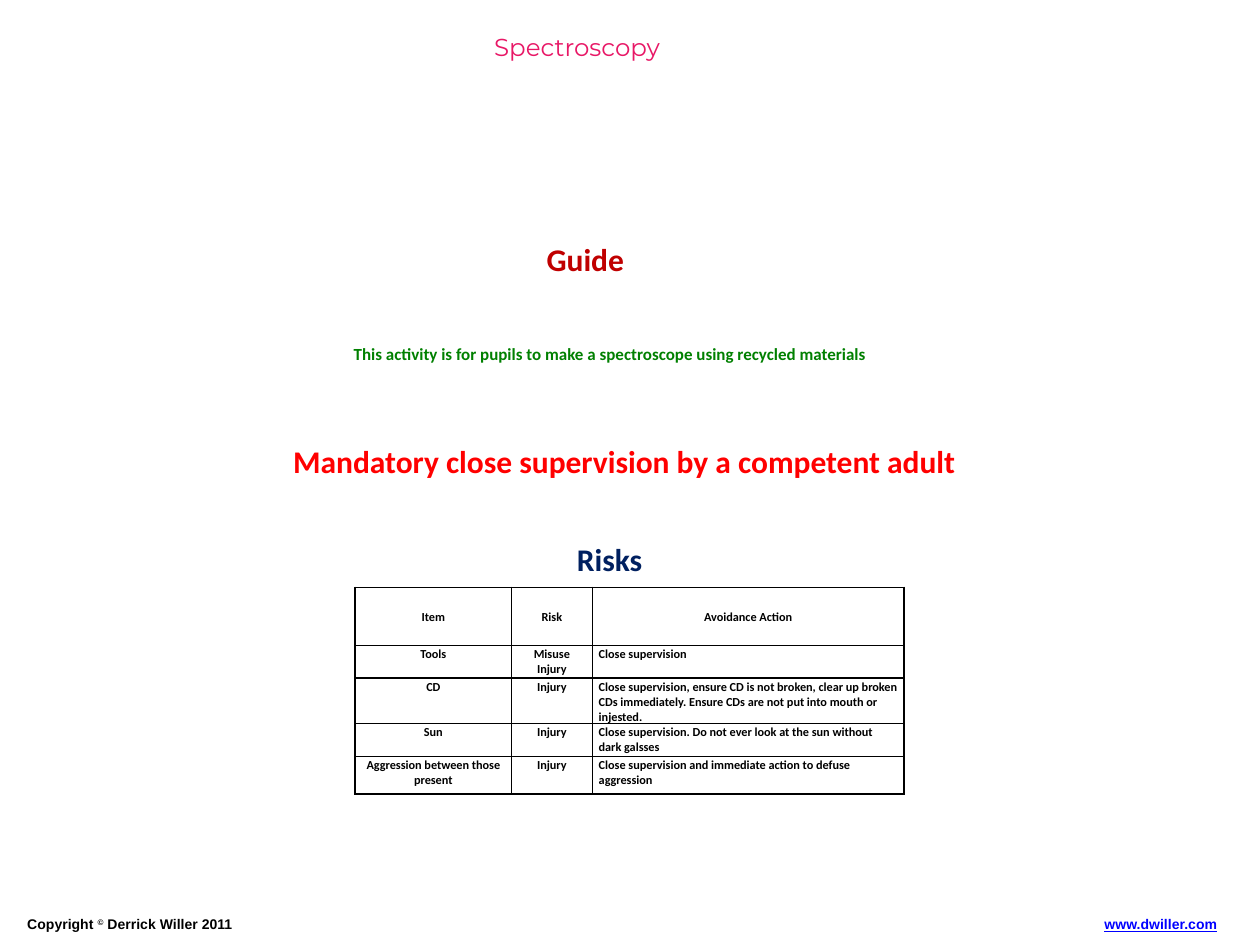
from lxml import etree
from pptx import Presentation
from pptx.dml.color import RGBColor
from pptx.enum import text
from pptx.oxml import ns
from pptx.util import Cm, Pt

COLOURS = {
    "black": "000000", "pink": "E81766", "dark red": "C00000", "green": "008000",
    "navy": "002060", "red": "FF0000", "link": "0000FF",
}


def format_paragraph(paragraph, face, size, colour, bold=True):
    font = paragraph.font
    font.name, font.size, font.bold = face, Pt(size), bold
    font.color.rgb = RGBColor.from_string(COLOURS[colour])


def add_line(box, pieces, face, size, colour, wrap=True):
    """Add a text box holding one paragraph; return that paragraph."""
    frame = slide.shapes.add_textbox(*map(Cm, box)).text_frame
    frame.word_wrap = wrap
    paragraph = frame.paragraphs[0]
    for piece in pieces:
        paragraph.add_run().text = piece
    format_paragraph(paragraph, face, size, colour)
    return paragraph


prs = Presentation()
prs.slide_width, prs.slide_height = Cm(25.4), Cm(19.05)
slide = prs.slides.add_slide(prs.slide_layouts[5])

# Title
title = slide.shapes.title
title.left, title.top, title.width, title.height = Cm(9.12), Cm(0.51), Cm(5.03), Cm(1.47)
title.text_frame.text = "Spectroscopy"
title.text_frame.word_wrap = False
title.text_frame.auto_size = text.MSO_AUTO_SIZE.NONE
title.text_frame.vertical_anchor = text.MSO_ANCHOR.TOP
title.text_frame.paragraphs[0].alignment = text.PP_ALIGN.CENTER
format_paragraph(title.text_frame.paragraphs[0], "Montserrat", 14, "pink", bold=False)

# Headings and introduction
for box, wording, size, colour, wrap in [
    ((10.77, 4.72, 2.08, 1.02), "Guide", 18, "dark red", False),
    ((6.88, 6.81, 15.67, 1.5),
     "This activity is for pupils to make a spectroscope using recycled materials",
     9.7, "green", True),
    ((5.66, 8.79, 15.93, 1.02),
     "Mandatory close supervision by a competent adult", 18, "red", False),
    ((11.38, 10.77, 1.83, 1.02), "Risks", 18, "navy", False),
]:
    add_line(box, [wording], "Calibri", size, colour, wrap)

# Risk table
risks = [
    ("Item", "Risk", "Avoidance Action"),
    ("Tools", "Misuse\nInjury", "Close supervision"),
    ("CD", "Injury", "Close supervision, ensure CD is not broken, clear up broken CDs "
     "immediately. Ensure CDs are not put into mouth or injested."),
    ("Sun", "Injury", "Close supervision. Do not ever look at the sun without dark galsses"),
    ("Aggression between those present", "Injury",
     "Close supervision and immediate action to defuse aggression"),
]
column_widths = [3.15, 1.63, 6.28]
row_heights = [1.17, 0.66, 0.66, 0.66, 0.76]
table = slide.shapes.add_table(
    len(risks), len(column_widths), Cm(7.16), Cm(11.84),
    Cm(sum(column_widths)), Cm(sum(row_heights))).table
table.first_row = table.horz_banding = False
for column, width in zip(table.columns, column_widths):
    column.width = Cm(width)
for row, height in zip(table.rows, row_heights):
    row.height = Cm(height)

for r, risk in enumerate(risks):
    for c, wording in enumerate(risk):
        cell = table.cell(r, c)
        cell.text = wording
        cell.margin_left = cell.margin_right = Cm(0.13)
        cell.margin_top, cell.margin_bottom = Cm(0.03), 0
        cell.vertical_anchor = text.MSO_ANCHOR.TOP if r else text.MSO_ANCHOR.MIDDLE
        for paragraph in cell.text_frame.paragraphs:
            format_paragraph(paragraph, "Calibri", 7, "black")
            is_action = r > 0 and c == 2
            paragraph.alignment = text.PP_ALIGN.LEFT if is_action else text.PP_ALIGN.CENTER
        properties = cell._tc.get_or_add_tcPr()
        for side in ("lnL", "lnR", "lnT", "lnB"):
            border = etree.SubElement(properties, ns.qn(f"a:{side}"), w=str(Pt(1)))
            fill = etree.SubElement(border, ns.qn("a:solidFill"))
            etree.SubElement(fill, ns.qn("a:srgbClr"), val=COLOURS["black"])
        cell.fill.background()

# Footer
notice = add_line((0.3, 18.34, 14.35, 0.61),
                  ["Copyright ", "©", " Derrick Willer 2011"], "Arial", 8, "black")
notice.runs[1].font._element.set("baseline", "30000")
website = add_line((21.39, 18.34, 3.4, 0.61), ["www.dwiller.com"], "Arial", 8, "link")
website.alignment = text.PP_ALIGN.RIGHT
website.font.underline = True

prs.save("out.pptx")
